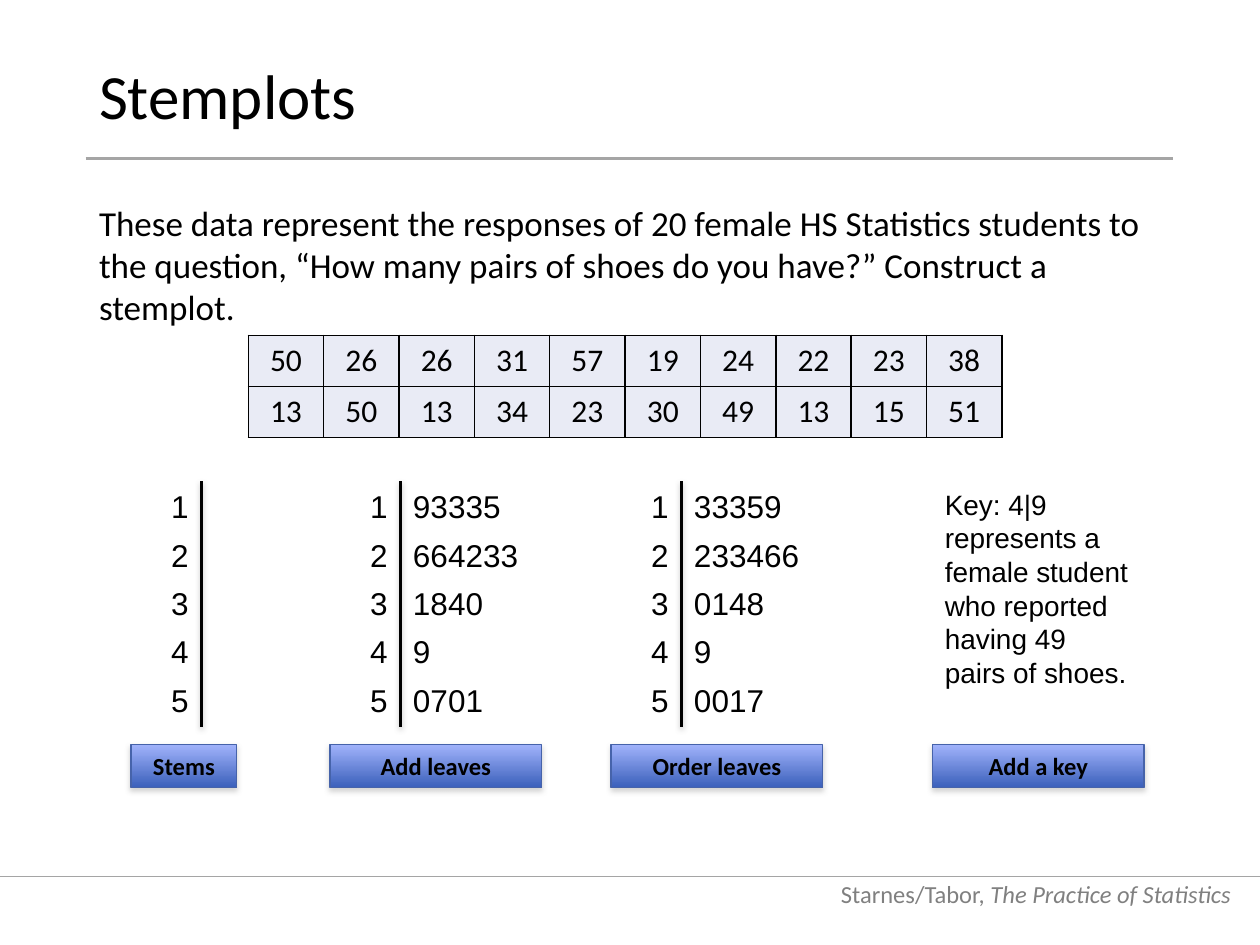
from lxml.etree import SubElement
from pptx import Presentation
from pptx.dml.color import RGBColor
from pptx.enum.shapes import MSO_CONNECTOR, MSO_SHAPE
from pptx.enum.text import MSO_ANCHOR, PP_ALIGN
from pptx.oxml.ns import qn
from pptx.util import Pt

BLACK = RGBColor(0x00, 0x00, 0x00)
GRAY = RGBColor(0x80, 0x80, 0x80)
RULE = RGBColor(0xA5, 0xA5, 0xA5)
CELL = RGBColor(0xE9, 0xEB, 0xF5)
BUTTON_TOP = RGBColor(0xA1, 0xB3, 0xFB)
BUTTON_BOTTOM = RGBColor(0x3B, 0x60, 0xBB)
BUTTON_EDGE = RGBColor(0x46, 0x63, 0xAA)

PAGE_WIDTH, PAGE_HEIGHT = 720, 540
PLOT_TOP, PLOT_HEIGHT = 275, 140.4
BUTTON_GAP, BUTTON_HEIGHT = 10.1, 24.5
STEM_INSET, RULE_INSET = 15.8, 40.3
LEAF_TAB = 24.5

SHOES = [
    [50, 26, 26, 31, 57, 19, 24, 22, 23, 38],
    [13, 50, 13, 34, 23, 30, 49, 13, 15, 51],
]
# label, left, width, leaves for stems 1 to 5
PLOTS = [
    ("Stems", 74.9, 60.5, [""] * 5),
    ("Add leaves", 188.6, 121, ["93335", "664233", "1840", "9", "0701"]),
    ("Order leaves", 349.2, 121, ["33359", "233466", "0148", "9", "0017"]),
]


def add_span(para, text, size, font="Calibri", color=BLACK, bold=False, italic=False):
    span = para.add_run()
    span.text = text
    span.font.size = Pt(size)
    span.font.name = font
    span.font.color.rgb = color
    span.font.bold = bold
    span.font.italic = italic


def add_text_box(page, left, top, width, height, anchor=MSO_ANCHOR.TOP):
    box = page.shapes.add_textbox(Pt(left), Pt(top), Pt(width), Pt(height))
    box.text_frame.word_wrap = True
    box.text_frame.vertical_anchor = anchor
    return box.text_frame


def add_effects(shape, shadow_alpha=0, distance=0):
    """Add an effect list, holding a downward shadow if alpha is given."""
    effects = SubElement(shape._element.spPr, qn("a:effectLst"))
    if shadow_alpha:
        shadow = SubElement(effects, qn("a:outerShdw"), blurRad=str(Pt(3.1)),
                            dist=str(Pt(distance)), dir="5400000", rotWithShape="0")
        color = SubElement(shadow, qn("a:srgbClr"), val=str(GRAY))
        SubElement(color, qn("a:alpha"), val=str(shadow_alpha * 1000))


def add_line(page, x1, y1, x2, y2, color, weight, shadow_alpha=0):
    line = page.shapes.add_connector(
        MSO_CONNECTOR.STRAIGHT, Pt(x1), Pt(y1), Pt(x2), Pt(y2))
    line.line.color.rgb = color
    line.line.width = Pt(weight)
    add_effects(line, shadow_alpha, 1.6)


def add_footer(page, left, top, width, height):
    add_line(page, 0, 501.1, PAGE_WIDTH, 501.1, RULE, 0.5)
    para = add_text_box(page, left, top, width, height, MSO_ANCHOR.BOTTOM).paragraphs[0]
    para.alignment = PP_ALIGN.RIGHT
    add_span(para, "Starnes/Tabor,", 14, color=GRAY)
    add_span(para, " The Practice of Statistics", 14, color=GRAY, italic=True)


def add_title(page, left, top, width, height):
    add_line(page, 49, 90.7, 670.3, 90.7, RULE, 1.5)
    para = add_text_box(page, left, top, width, height, MSO_ANCHOR.MIDDLE).paragraphs[0]
    para.line_spacing = 0.9
    add_span(para, "Stemplots", 36)


def add_question(page, left, top, width, height):
    para = add_text_box(page, left, top, width, height).paragraphs[0]
    add_span(para, "These data represent the responses of 20 female HS Statistics "
             "students to the question, “How many pairs of shoes do you have?” "
             "Construct a stemplot.", 20)


def add_cell_borders(cell):
    properties = cell._tc.get_or_add_tcPr()
    for index, side in enumerate(("a:lnL", "a:lnR", "a:lnT", "a:lnB")):
        edge = properties.makeelement(qn(side), {"w": str(Pt(1))})
        fill = SubElement(edge, qn("a:solidFill"))
        SubElement(fill, qn("a:srgbClr"), val=str(BLACK))
        properties.insert(index, edge)


def add_data_table(page, left, top, width, height):
    rows, columns = len(SHOES), len(SHOES[0])
    table = page.shapes.add_table(
        rows, columns, Pt(left), Pt(top), Pt(width), Pt(height)).table
    table.first_row = table.horz_banding = False
    for column in table.columns:
        column.width = Pt(width / columns)
    for r, values in enumerate(SHOES):
        table.rows[r].height = Pt(height / rows)
        for c, value in enumerate(values):
            cell = table.cell(r, c)
            cell.fill.solid()
            cell.fill.fore_color.rgb = CELL
            add_cell_borders(cell)
            para = cell.text_frame.paragraphs[0]
            para.alignment = PP_ALIGN.CENTER
            add_span(para, str(value), 18)


def add_button(page, label, left, width):
    top = PLOT_TOP + PLOT_HEIGHT + BUTTON_GAP
    button = page.shapes.add_shape(
        MSO_SHAPE.RECTANGLE, Pt(left), Pt(top), Pt(width), Pt(BUTTON_HEIGHT))
    button.fill.gradient()
    button.fill.gradient_angle = 270
    for stop, color in zip(button.fill.gradient_stops, (BUTTON_TOP, BUTTON_BOTTOM)):
        stop.color.rgb = color
    button.line.color.rgb = BUTTON_EDGE
    button.line.width = Pt(0.75)
    add_effects(button, 35, 1.8)
    para = button.text_frame.paragraphs[0]
    para.alignment = PP_ALIGN.CENTER
    add_span(para, label, 14, bold=True)


def add_stemplot(page, label, left, width, leaves):
    add_button(page, label, left, width)
    # Stems and leaves, the leaves set off by a tab
    frame = add_text_box(page, left + STEM_INSET, PLOT_TOP, width - STEM_INSET, PLOT_HEIGHT)
    for stem, leaf in enumerate(leaves, start=1):
        para = frame.paragraphs[0] if stem == 1 else frame.add_paragraph()
        para.space_after = Pt(6)
        if leaf:
            tabs = SubElement(para._p.get_or_add_pPr(), qn("a:tabLst"))
            SubElement(tabs, qn("a:tab"), pos=str(Pt(LEAF_TAB)), algn="l")
        add_span(para, f"{stem}\t{leaf}" if leaf else str(stem), 18, "Arial")
    # Rule between stems and leaves
    x = left + RULE_INSET
    add_line(page, x, PLOT_TOP, x, PLOT_TOP + PLOT_HEIGHT, BLACK, 2, 38)


def add_key(page, left, width):
    add_button(page, "Add a key", left, width)
    para = add_text_box(page, left, PLOT_TOP, width, 123.8).paragraphs[0]
    para.space_after = Pt(6)
    add_span(para, "Key: 4|9 represents a female student who reported having "
             "49 pairs of shoes.", 16, "Arial")


def main():
    deck = Presentation()
    deck.slide_width, deck.slide_height = Pt(PAGE_WIDTH), Pt(PAGE_HEIGHT)
    page = deck.slides.add_slide(deck.slide_layouts[6])
    add_footer(page, 465.8, 493.9, 244.8, 28.8)
    add_title(page, 49.5, 28.8, 620.6, 56.2)
    add_data_table(page, 141.9, 191.6, 430.6, 58.4)
    for plot in PLOTS:
        add_stemplot(page, *plot)
    add_key(page, 532.8, 121)
    add_question(page, 49.5, 111.6, 615.6, 79.9)
    deck.save("out.pptx")


if __name__ == "__main__":
    main()
